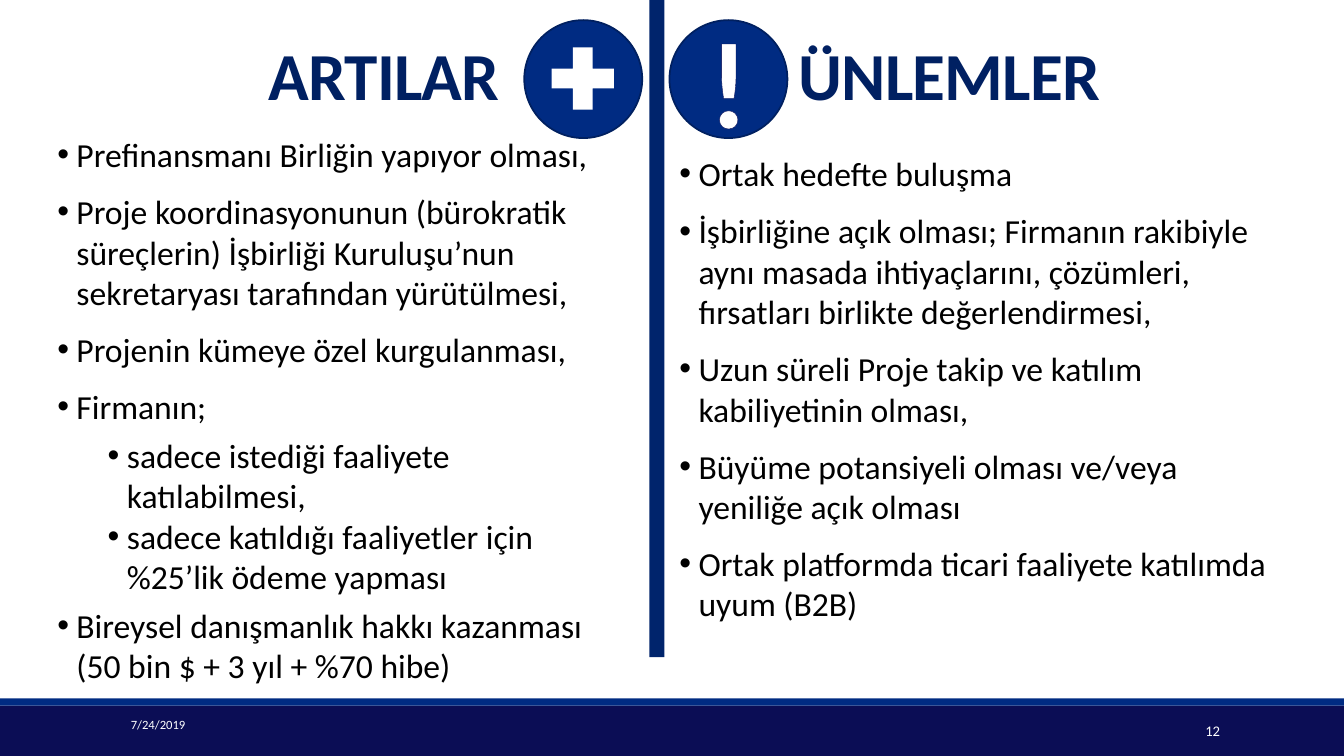
from lxml import etree
from pptx import Presentation
from pptx.dml.color import RGBColor
from pptx.enum.shapes import MSO_SHAPE
from pptx.enum.text import MSO_ANCHOR, PP_ALIGN
from pptx.oxml.ns import qn
from pptx.util import Pt

RECTANGLE, OVAL, PLUS = MSO_SHAPE.RECTANGLE, MSO_SHAPE.OVAL, MSO_SHAPE.MATH_PLUS
TOP, MIDDLE = MSO_ANCHOR.TOP, MSO_ANCHOR.MIDDLE
LEFT, RIGHT = PP_ALIGN.LEFT, PP_ALIGN.RIGHT

PX = 9144  # 100 px to the inch
PAGE_WIDTH, PAGE_HEIGHT = 1333, 750
FONT = "Calibri"
WHITE, BLACK = "FFFFFF", "000000"
NAVY, BLUE, DIVIDER, HEADING, RIM = "0B0D55", "002B82", "00246C", "002062", "002060"

BARS = [
    ((0, 700, PAGE_WIDTH, 50), NAVY),
    ((0, 693, PAGE_WIDTH, 7), BLUE),
    ((644, 0, 15, 652), DIVIDER),
]
FOOTERS = [
    ("7/24/2019", (120, 699, 270, 40), 9, LEFT),
    ("12", (1077, 705, 143, 40), 10.5, RIGHT),
]
HEADINGS = [
    ("ARTILAR ", (0, 7, 520, 144), RIGHT),
    ("ÜNLEMLER", (782, 7, 573, 144), LEFT),
]
DISC_TOP, DISC_SIZE, PLUS_SIZE = 20, 117, 84
PLUS_DISC_LEFT, MARK_DISC_LEFT = 520, 664
MARK_BOX = (693, 0, 60, 158)

# Each item is (level, text)
COLUMNS = [
    ((47, 128, 574, 562), [
        (0, "Prefinansmanı Birliğin yapıyor olması,"),
        (0, "Proje koordinasyonunun (bürokratik süreçlerin) İşbirliği "
            "Kuruluşu’nun sekretaryası tarafından yürütülmesi,"),
        (0, "Projenin kümeye özel kurgulanması,"),
        (0, "Firmanın;"),
        (1, "sadece istediği faaliyete katılabilmesi,"),
        (1, "sadece katıldığı faaliyetler için %25’lik ödeme yapması"),
        (0, "Bireysel danışmanlık hakkı kazanması (50 bin $ + 3 yıl + %70 hibe)"),
    ]),
    ((664, 147, 604, 481), [
        (0, "Ortak hedefte buluşma"),
        (0, "İşbirliğine açık olması; Firmanın rakibiyle aynı masada "
            "ihtiyaçlarını, çözümleri, fırsatları birlikte değerlendirmesi,"),
        (0, "Uzun süreli Proje takip ve katılım kabiliyetinin olması,"),
        (0, "Büyüme potansiyeli olması ve/veya yeniliğe açık olması"),
        (0, "Ortak platformda ticari faaliyete katılımda uyum (B2B)"),
    ]),
]
BULLET_INDENT, LEVEL_INDENT = 19, 50


def color(value):
    return RGBColor.from_string(value)


def emu(box):
    return [length * PX for length in box]


def add_shape(parent, kind, box, fill, line=None):
    shape = parent.shapes.add_shape(kind, *emu(box))
    shape.shadow.inherit = False
    shape.fill.solid()
    shape.fill.fore_color.rgb = color(fill)
    if line:
        shape.line.color.rgb = color(line)
        shape.line.width = Pt(1.25)
    else:
        shape.line.fill.background()


def add_text(parent, box, texts, size, fill, align=LEFT, anchor=TOP, bold=False, wrap=True):
    """Add a text box with one paragraph per text and return its paragraphs."""
    frame = parent.shapes.add_textbox(*emu(box)).text_frame
    frame.word_wrap = wrap
    frame.vertical_anchor = anchor
    frame.text = "\n".join(texts)
    for para in frame.paragraphs:
        para.alignment = align
        font = para.font
        font.name, font.size, font.bold = FONT, Pt(size), bold
        font.color.rgb = color(fill)
    return frame.paragraphs


def add_bullet(para, level):
    para.level = level
    if level == 0:
        para.space_before = para.space_after = Pt(6)
    properties = para._p.get_or_add_pPr()
    properties.set("marL", str((BULLET_INDENT + level * LEVEL_INDENT) * PX))
    properties.set("indent", str(-BULLET_INDENT * PX))
    font = etree.Element(qn("a:buFont"), typeface="Arial")
    mark = etree.Element(qn("a:buChar"), char="•")
    defaults = properties.find(qn("a:defRPr"))
    defaults.addprevious(font)
    defaults.addprevious(mark)


def add_outline(para, fill, width):
    line = etree.Element(qn("a:ln"), w=str(Pt(width)))
    solid = etree.SubElement(line, qn("a:solidFill"))
    etree.SubElement(solid, qn("a:srgbClr"), val=fill)
    para._p.pPr.find(qn("a:defRPr")).insert(0, line)


def add_disc(page, left):
    """Add a group that holds a round badge and return the group."""
    badge = page.shapes.add_group_shape()
    add_shape(badge, OVAL, (left, DISC_TOP, DISC_SIZE, DISC_SIZE), BLUE, RIM)
    return badge


def main():
    deck = Presentation()
    deck.slide_width, deck.slide_height = emu((PAGE_WIDTH, PAGE_HEIGHT))
    page = deck.slides.add_slide(deck.slide_layouts[6])

    for box, fill in BARS:
        add_shape(page, RECTANGLE, box, fill)
    for text, box, size, align in FOOTERS:
        add_text(page, box, [text], size, WHITE, align, MIDDLE)
    for text, box, align in HEADINGS:
        para = add_text(page, box, [text], 48, HEADING, align, MIDDLE, bold=True)[0]
        para.line_spacing = 0.85
        para._p.pPr.find(qn("a:defRPr")).set("spc", "-50")

    plus_badge = add_disc(page, PLUS_DISC_LEFT)
    margin = (DISC_SIZE - PLUS_SIZE) // 2
    plus_box = (PLUS_DISC_LEFT + margin, DISC_TOP + margin, PLUS_SIZE, PLUS_SIZE)
    add_shape(plus_badge, PLUS, plus_box, WHITE)

    mark_badge = add_disc(page, MARK_DISC_LEFT)
    mark = add_text(mark_badge, MARK_BOX, ["!"], 88, WHITE, bold=True, wrap=False)[0]
    add_outline(mark, NAVY, 0.52)

    for box, items in COLUMNS:
        paragraphs = add_text(page, box, [text for _, text in items], 24, BLACK)
        for para, (level, _) in zip(paragraphs, items):
            add_bullet(para, level)

    deck.save("out.pptx")


if __name__ == "__main__":
    main()
